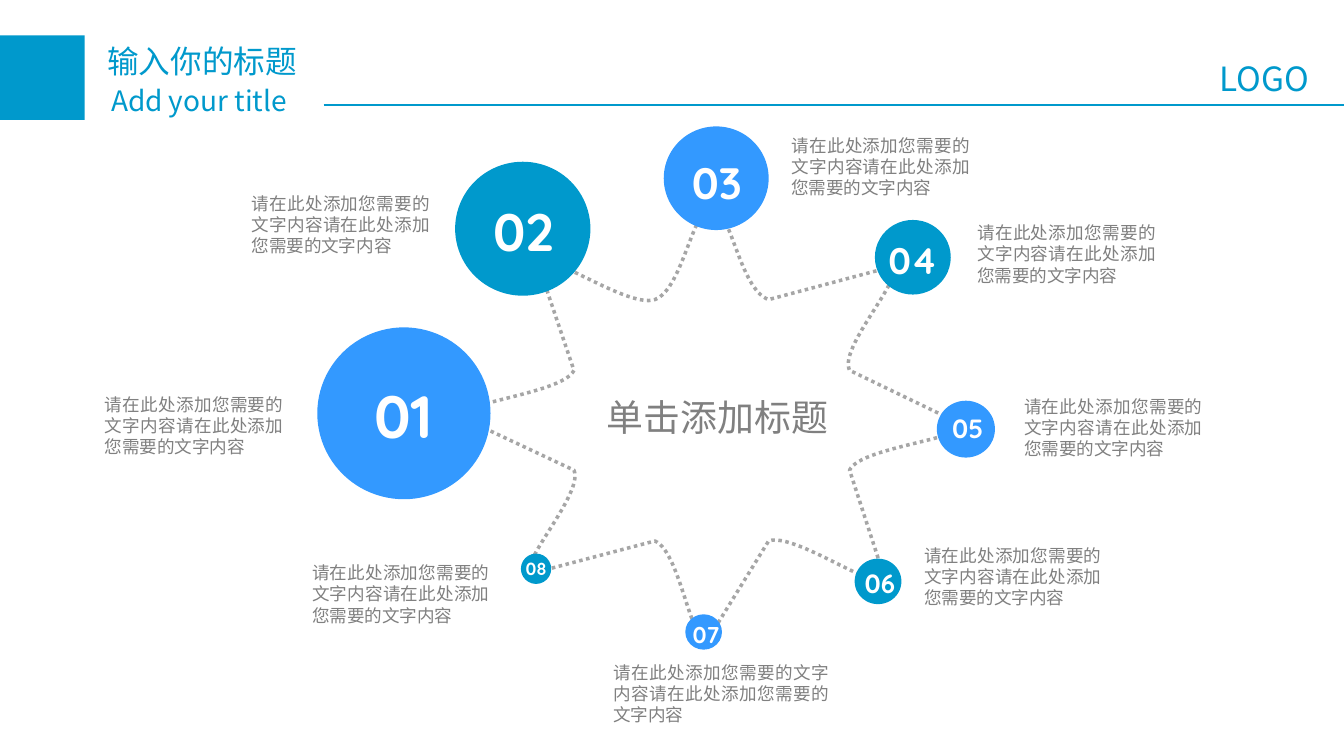
from dataclasses import dataclass

from lxml import etree
from pptx import Presentation
from pptx.dml.color import RGBColor
from pptx.enum.dml import MSO_LINE
from pptx.enum.shapes import MSO_CONNECTOR, MSO_SHAPE
from pptx.enum.text import MSO_ANCHOR, MSO_AUTO_SIZE, PP_ALIGN
from pptx.oxml.ns import qn
from pptx.util import Inches, Pt

LEFT, CENTER, JUSTIFY = PP_ALIGN.LEFT, PP_ALIGN.CENTER, PP_ALIGN.JUSTIFY
RECT, OVAL = MSO_SHAPE.RECTANGLE, MSO_SHAPE.OVAL
STRAIGHT = MSO_CONNECTOR.STRAIGHT
DOTTED = MSO_LINE.ROUND_DOT
GROW = MSO_AUTO_SIZE.SHAPE_TO_FIT_TEXT
TOP = MSO_ANCHOR.TOP


@dataclass(frozen=True)
class Theme:
    teal: str = "0099CC"
    blue: str = "3399FF"
    gray: str = "808080"
    dots: str = "A6A6A6"
    white: str = "FFFFFF"
    cjk: str = "Noto Sans CJK SC"
    latin: str = "Arial"
    digits: str = "Quicksand"
    title: int = 18
    subtitle: int = 16
    logo: int = 19
    center: int = 21
    body: int = 10


THEME = Theme()
BODY = "请在此处添加您需要的文字内容" * 2
FILLED_LABELS = ("01", "02")

STEPS = [
    ("01", 34, (2.51, 2.59, 1.37, 1.36), (2.79, 3.06, 0.8, 0.56), (0.72, 3.07, 1.63, 0.6)),
    ("02", 30, (3.6, 1.28, 1.07, 1.06), (3.74, 1.62, 0.8, 0.5), (1.88, 1.48, 1.63, 0.6)),
    ("03", 25, (5.25, 1, 0.83, 0.82), (5.27, 1.26, 0.8, 0.44), (6.15, 1.02, 1.63, 0.77)),
    ("04", 21, (6.92, 1.74, 0.6, 0.59), (6.82, 1.9, 0.8, 0.39), (7.62, 1.71, 1.63, 0.6)),
    ("05", 15, (7.41, 3.17, 0.46, 0.45), (7.38, 3.26, 0.55, 0.3), (7.99, 3.08, 1.63, 0.6)),
    ("06", 15, (6.76, 4.42, 0.37, 0.36), (6.72, 4.49, 0.48, 0.3), (7.2, 4.26, 1.62, 0.6)),
    ("07", 13, (5.42, 4.86, 0.29, 0.28), (5.33, 4.9, 0.51, 0.28), (4.74, 5.19, 1.93, 0.77)),
    ("08", 10, (4.12, 4.38, 0.24, 0.24), (4.04, 4.4, 0.4, 0.24), (2.36, 4.4, 1.62, 0.6)),
]

STAR_BOX = (3.66, 1.64, 3.93, 3.41)
STAR_START = (3.71, 3.33)
STAR_SEGMENTS = [
    [(3.43, 3.2), (4.45, 3.13), (4.54, 2.93)],
    [(4.27, 2.13)],
    [(4.18, 1.87), (4.95, 2.45), (5.18, 2.37)],
    [(5.4, 2.29), (5.48, 1.64), (5.63, 1.64)],
    [(5.78, 1.64), (5.85, 2.29), (6.08, 2.37)],
    [(6.98, 2.13)],
    [(7.29, 2.06), (6.62, 2.73), (6.72, 2.93)],
    [(7.55, 3.33)],
    [(7.82, 3.46), (6.81, 3.52), (6.72, 3.72)],
    [(6.98, 4.52)],
    [(7.07, 4.79), (6.3, 4.2), (6.08, 4.28)],
    [(5.63, 5.01)],
    [(5.48, 5.26), (5.4, 4.37), (5.18, 4.28)],
    [(4.27, 4.52)],
    [(3.97, 4.6), (4.63, 3.92), (4.54, 3.72)],
    [STAR_START],
]


def rgb(color):
    return RGBColor.from_string(color)


def add_filled(shapes, kind, box, color):
    sp = shapes.add_shape(kind, *map(Inches, box))
    sp.shadow.inherit = False
    sp.fill.solid()
    sp.fill.fore_color.rgb = rgb(color)
    sp.line.fill.background()
    return sp


def add_text(shapes, box, text, *, size, color, font=THEME.cjk, bold=False,
             align=LEFT, spacing=None, inset=0.1, wrap=True, fill=None):
    if fill:
        sp = add_filled(shapes, RECT, box, fill)
        sp._element.spPr.get_or_add_xfrm().set("flipH", "1")
    else:
        sp = shapes.add_textbox(*map(Inches, box))
    tf = sp.text_frame
    tf.word_wrap = wrap
    tf.auto_size = GROW
    tf.vertical_anchor = TOP
    tf.margin_left = tf.margin_right = Inches(inset)
    p = tf.paragraphs[0]
    p.alignment = align
    if spacing:
        p.line_spacing = spacing
    r = p.add_run()
    r.text = text
    r.font.size = Pt(size)
    r.font.bold = bold
    r.font.name = font
    r.font.color.rgb = rgb(color)
    ea = etree.SubElement(r.font._element, qn("a:ea"))
    ea.set("typeface", THEME.cjk)


def add_rule(s, start, end, color):
    line = s.shapes.add_connector(STRAIGHT, *map(Inches, start + end))
    line.line.color.rgb = rgb(color)
    line.line.width = Pt(0.75)
    etree.SubElement(line._element.spPr, qn("a:effectLst"))


def add_command(outline, tag, points):
    command = etree.SubElement(outline, qn(tag))
    for x, y in points:
        pt = etree.SubElement(command, qn("a:pt"))
        pt.set("x", str(Inches(x - STAR_BOX[0])))
        pt.set("y", str(Inches(y - STAR_BOX[1])))


def add_star(s):
    corners = [tuple(map(Inches, segment[-1])) for segment in STAR_SEGMENTS]
    builder = s.shapes.build_freeform(*map(Inches, STAR_START), scale=1.0)
    builder.add_line_segments(corners, close=True)
    sp = builder.convert_to_shape()
    sp.left, sp.top, sp.width, sp.height = map(Inches, STAR_BOX)
    outline = next(sp._element.iter(qn("a:path")))
    for command in list(outline):
        outline.remove(command)
    outline.set("w", str(sp.width))
    outline.set("h", str(sp.height))
    add_command(outline, "a:moveTo", [STAR_START])
    for segment in STAR_SEGMENTS:
        tag = "a:cubicBezTo" if len(segment) == 3 else "a:lnTo"
        add_command(outline, tag, segment)
    etree.SubElement(outline, qn("a:close"))
    sp.shadow.inherit = False
    sp.fill.background()
    sp.line.color.rgb = rgb(THEME.dots)
    sp.line.width = Pt(2)
    sp.line.dash_style = DOTTED


def add_step(s, number, size, circle, label, body, color):
    group = s.shapes.add_group_shape()
    add_filled(group.shapes, OVAL, circle, color)
    add_text(group.shapes, label, number, size=size, color=THEME.white,
             font=THEME.digits, bold=True, align=CENTER, spacing=0.8, inset=0.11,
             fill=color if number in FILLED_LABELS else None)
    add_text(s.shapes, body, BODY, size=THEME.body, color=THEME.gray,
             font=THEME.latin, align=JUSTIFY, inset=0.11)


def add_header(s):
    add_filled(s.shapes, RECT, (0, 0.28, 0.67, 0.67), THEME.teal)
    add_text(s.shapes, (0.75, 0.28, 1.73, 0.4), "输入你的标题",
             size=THEME.title, color=THEME.teal)
    add_text(s.shapes, (0.78, 0.61, 1.73, 0.37), "Add your title",
             size=THEME.subtitle, color=THEME.teal)
    add_rule(s, (2.56, 0.83), (10.63, 0.83), THEME.teal)
    add_text(s.shapes, (9.55, 0.41, 0.96, 0.42), "LOGO",
             size=THEME.logo, color=THEME.teal, wrap=False)


def main():
    prs = Presentation()
    prs.slide_width, prs.slide_height = Inches(10.63), Inches(5.91)
    s = prs.slides.add_slide(prs.slide_layouts[6])
    add_header(s)
    add_star(s)
    add_text(s.shapes, (4.45, 3.14, 2.45, 0.39), "单击添加标题", size=THEME.center,
             color=THEME.gray, align=CENTER, spacing=0.8, inset=0.11)
    for i, step in enumerate(STEPS):
        add_step(s, *step, color=(THEME.blue, THEME.teal)[i % 2])
    prs.save("out.pptx")


if __name__ == "__main__":
    main()
